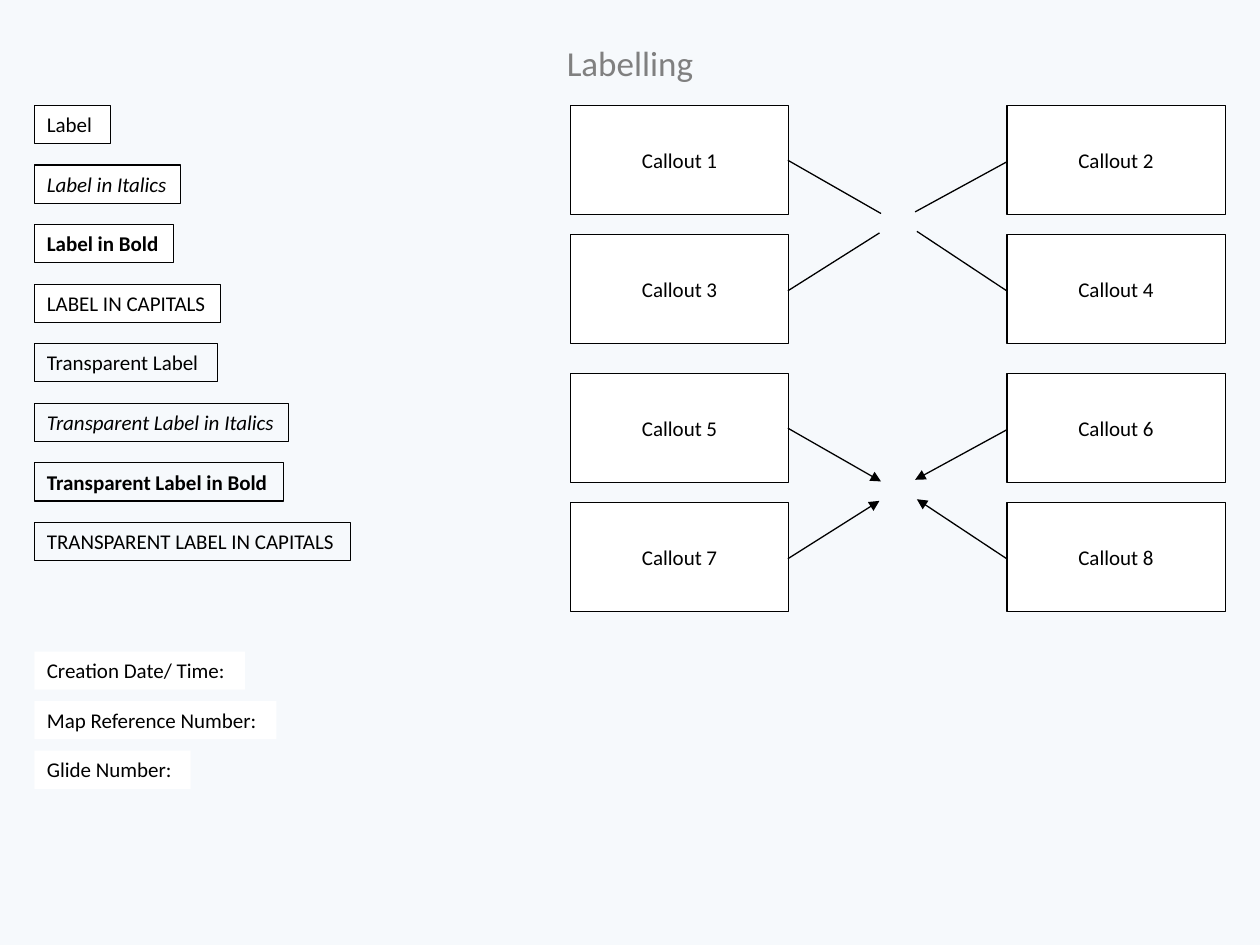
from lxml import etree
from pptx import Presentation
from pptx.dml.color import RGBColor
from pptx.enum.shapes import MSO_SHAPE
from pptx.enum.text import MSO_ANCHOR, MSO_AUTO_SIZE, PP_ALIGN
from pptx.oxml.ns import qn
from pptx.util import Pt

RECT, CALLOUT = MSO_SHAPE.RECTANGLE, MSO_SHAPE.LINE_CALLOUT_1
LEFT, CENTER = PP_ALIGN.LEFT, PP_ALIGN.CENTER
TOP, MIDDLE = MSO_ANCHOR.TOP, MSO_ANCHOR.MIDDLE

FONT = "Calibri"
BLACK, WHITE, GREY, PALE = "000000", "FFFFFF", "808080", "F6F9FC"

# text, width, style
LABELS = [
    ("Label", 43.4, ""),
    ("Label in Italics", 83.5, "italic"),
    ("Label in Bold", 79.4, "bold"),
    ("LABEL IN CAPITALS", 106.2, ""),
]
TRANSPARENT_LABELS = [
    ("Transparent Label", 104.6, ""),
    ("Transparent Label in Italics", 145.2, "italic"),
    ("Transparent Label in Bold", 142.3, "bold"),
    ("TRANSPARENT LABEL IN CAPITALS", 180.7, ""),
]
MAP_FIELDS = [
    ("Creation Date/ Time:", 120.3, ""),
    ("Map Reference Number:", 138.3, ""),
    ("Glide Number:", 89.3, ""),
]
# Leader line of each callout in a group of four: start y, start x, end y, end x
LEADERS = [
    (0.502, 0.996, 0.99, 1.423),
    (0.517, -0.001, 0.975, -0.421),
    (0.517, 0.996, -0.014, 1.416),
    (0.517, -0.001, -0.029, -0.413),
]

LABEL_X, LABEL_Y, LABEL_H, LABEL_STEP = 19.7, 60.3, 21.8, 34.03
FIELD_Y, FIELD_STEP = 372.3, 28.35
CALLOUT_X, CALLOUT_Y, CALLOUT_W, CALLOUT_H = 326, 60.3, 124.7, 62.35
COLUMN_STEP, ROW_STEP, GROUP_STEP = 249.4, 73.7, 153.1


def rgb(color):
    return RGBColor.from_string(color)


def write(sp, text, size, color, align, anchor):
    tf = sp.text_frame
    tf.text = text
    tf.vertical_anchor = anchor
    p = tf.paragraphs[0]
    p.alignment = align
    p.font.name, p.font.size = FONT, Pt(size)
    p.font.color.rgb = rgb(color)
    return tf


def add_box(slide, kind, x, y, w, h, fill, line):
    sp = slide.shapes.add_shape(kind, Pt(x), Pt(y), Pt(w), Pt(h))
    sp.shadow.inherit = False
    if fill:
        sp.fill.solid()
        sp.fill.fore_color.rgb = rgb(fill)
    else:
        sp.fill.background()
    if line:
        sp.line.color.rgb = rgb(line)
        sp.line.width = Pt(0.75)
    else:
        sp.line.fill.background()
    return sp


def add_labels(slide, labels, top, step, fill, line):
    for i, (text, width, style) in enumerate(labels):
        sp = add_box(slide, RECT, LABEL_X, top + i * step, width, LABEL_H, fill, line)
        tf = write(sp, text, 12, BLACK, LEFT, TOP)
        tf.word_wrap = False
        tf.auto_size = MSO_AUTO_SIZE.SHAPE_TO_FIT_TEXT
        font = tf.paragraphs[0].font
        font.bold, font.italic = style == "bold", style == "italic"


def add_callout(slide, index):
    group, place = divmod(index, 4)
    row, column = divmod(place, 2)
    x = CALLOUT_X + column * COLUMN_STEP
    y = CALLOUT_Y + group * GROUP_STEP + row * ROW_STEP
    sp = add_box(slide, CALLOUT, x, y, CALLOUT_W, CALLOUT_H, WHITE, BLACK)
    for i, value in enumerate(LEADERS[place]):
        sp.adjustments[i] = value
    if group == 1:
        ln = sp.line._get_or_add_ln()
        etree.SubElement(ln, qn("a:tailEnd"), type="triangle")
    write(sp, f"Callout {index + 1}", 12, BLACK, CENTER, MIDDLE)


def main():
    prs = Presentation()
    prs.slide_width, prs.slide_height = Pt(720), Pt(540)
    slide = prs.slides.add_slide(prs.slide_layouts[5])
    slide.background.fill.solid()
    slide.background.fill.fore_color.rgb = rgb(PALE)

    title = slide.shapes.title
    title.left, title.top, title.width, title.height = Pt(36), Pt(22), Pt(648), Pt(27)
    write(title, "Labelling", 20, GREY, CENTER, MIDDLE)

    for index in range(8):
        add_callout(slide, index)

    transparent_y = LABEL_Y + len(LABELS) * LABEL_STEP
    add_labels(slide, LABELS, LABEL_Y, LABEL_STEP, WHITE, BLACK)
    add_labels(slide, TRANSPARENT_LABELS, transparent_y, LABEL_STEP, None, BLACK)
    add_labels(slide, MAP_FIELDS, FIELD_Y, FIELD_STEP, WHITE, None)

    prs.save("out.pptx")


if __name__ == "__main__":
    main()
